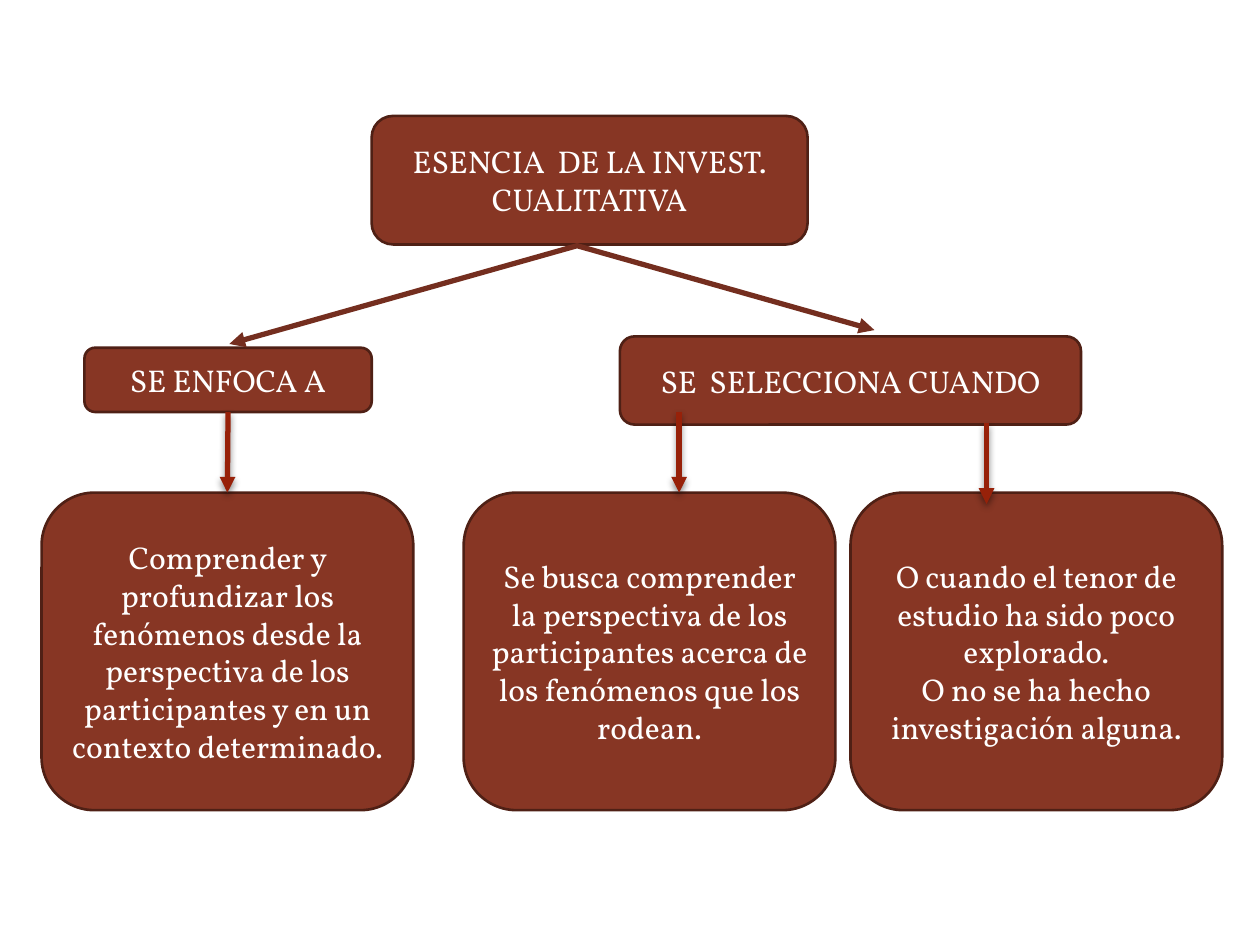
from lxml import etree
from pptx import Presentation
from pptx.dml.color import RGBColor
from pptx.enum import shapes, text
from pptx.oxml import ns
from pptx.util import Inches, Pt


def paint(form, hue):
    form.solid()
    form.fore_color.rgb = RGBColor.from_string(hue)


def add(node, tag, **attrs):
    return etree.SubElement(node, ns.qn(tag), attrs)


deck = Presentation()
deck.slide_width, deck.slide_height = Inches(10), Inches(7.5)
slide = deck.slides.add_slide(deck.slide_layouts[6])

wide, tall, low = 2.95, 2.52, 3.91
nodes = [
    (2.95, 0.92, 3.46, 1.02, "ESENCIA  DE LA INVEST. CUALITATIVA"),
    (0.67, 2.76, 2.28, 0.51, "SE ENFOCA A"),
    (4.92, 2.67, 3.66, 0.7, "SE  SELECCIONA CUANDO"),
    (0.33, low, wide, tall, "Comprender y profundizar los fenómenos desde la "
     "perspectiva de los participantes y en un contexto determinado."),
    (3.68, low, wide, tall, "Se busca comprender la perspectiva de los "
     "participantes acerca de los fenómenos que los rodean."),
    (6.75, low, wide, tall, "O cuando el tenor de estudio ha sido poco explorado.\n"
     "O no se ha hecho investigación alguna."),
]
boxes = []
for *rect, words in nodes:
    box = slide.shapes.add_shape(shapes.MSO_SHAPE.ROUNDED_RECTANGLE, *map(Inches, rect))
    box.shadow.inherit = False
    paint(box.fill, "873624")
    paint(box.line.fill, "4F2015")
    box.line.width = Pt(1.5)
    frame = box.text_frame
    frame.word_wrap = True
    frame.vertical_anchor = text.MSO_ANCHOR.MIDDLE
    frame.text = words
    for para in frame.paragraphs:
        para.alignment = text.PP_ALIGN.CENTER
        para.font.name = "Vollkorn"
        para.font.size = Pt(18)
        paint(para.font.fill, "FFFFFF")
    boxes.append(box)

pen = slide.shapes.build_freeform(Inches(1.82), Inches(2.73))
pen.add_line_segments([(Inches(4.58), Inches(1.95)), (Inches(6.94), Inches(2.62))], close=False)
fork = pen.convert_to_shape()
fork.shadow.inherit = False
fork.fill.background()
paint(fork.line.fill, "742E1F")
fork.line.width = Pt(3)
for end in ("a:headEnd", "a:tailEnd"):
    add(fork.line._get_or_add_ln(), end, type="triangle")

arrows = []
for x, top, foot in [(1.81, 3.27, low), (5.39, 3.27, low), (7.83, 3.36, 4)]:
    arrow = slide.shapes.add_connector(
        shapes.MSO_CONNECTOR.STRAIGHT, Inches(x), Inches(top), Inches(x), Inches(foot))
    paint(arrow.line.fill, "972109")
    arrow.line.width = Pt(3)
    add(arrow.line._get_or_add_ln(), "a:tailEnd", type="triangle")
    glow = add(add(arrow._element.spPr, "a:effectLst"), "a:outerShdw",
               blurRad=str(Pt(4)), dist=str(Pt(2)), dir="5400000", rotWithShape="0")
    add(add(glow, "a:srgbClr", val="000000"), "a:alpha", val="46000")
    arrows.append(arrow)
arrows[0].begin_connect(boxes[1], 2)
arrows[0].end_connect(boxes[3], 0)

deck.save("out.pptx")
